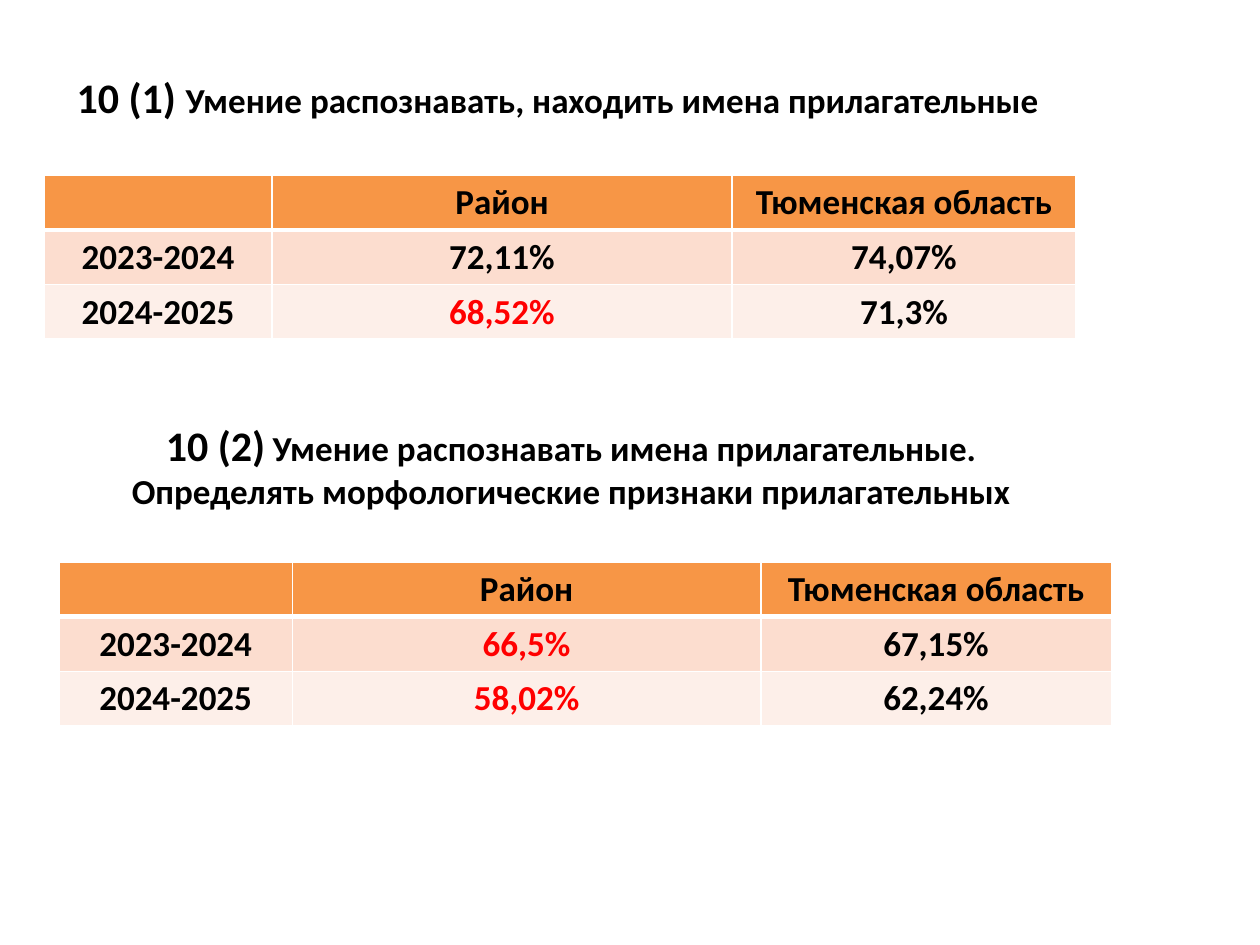
"""Builds a slide comparing district and regional results for two adjective skills."""
from lxml.etree import SubElement
from pptx import Presentation
from pptx.dml.color import RGBColor
from pptx.enum.text import MSO_AUTO_SIZE as AutoSize, PP_ALIGN as Align
from pptx.oxml.ns import qn
from pptx.util import Inches, Pt

BLACK = RGBColor(0x00, 0x00, 0x00)
RED = RGBColor(0xFF, 0x00, 0x00)
WHITE = RGBColor(0xFF, 0xFF, 0xFF)
ORANGE = RGBColor(0xF7, 0x96, 0x46)
PEACH = RGBColor(0xFC, 0xDD, 0xCF)
PALE_PEACH = RGBColor(0xFD, 0xEF, 0xE9)

HEADER = ("", "Район", "Тюменская область")
ROW_FILLS = (ORANGE, PEACH, PALE_PEACH)
ROW_HEIGHT = 0.43


class ResultsSlide:
    """Holds the text style and the current slide."""

    font_name = "Calibri"
    text_size = 20

    def __init__(self, presentation):
        self.slide = presentation.slides.add_slide(presentation.slide_layouts[6])

    def format_run(self, run, size=text_size, color=BLACK):
        run.font.name = self.font_name
        run.font.size = Pt(size)
        run.font.bold = True
        run.font.color.rgb = color

    def add_heading(self, left, top, width, height, lines, align=Align.LEFT):
        shape = self.slide.shapes.add_textbox(
            Inches(left), Inches(top), Inches(width), Inches(height))
        text_frame = shape.text_frame
        text_frame.word_wrap = True
        text_frame.auto_size = AutoSize.SHAPE_TO_FIT_TEXT
        for index, line in enumerate(lines):
            paragraph = text_frame.add_paragraph() if index else text_frame.paragraphs[0]
            paragraph.alignment = align
            for text, size in line:
                run = paragraph.add_run()
                run.text = text
                self.format_run(run, size)

    def add_borders(self, cell, widths):
        properties = cell._tc.get_or_add_tcPr()
        for side, width in widths.items():
            line = SubElement(properties, qn(f"a:ln{side}"), w=str(Pt(width)))
            fill = SubElement(line, qn("a:solidFill"))
            SubElement(fill, qn("a:srgbClr"), val=str(WHITE))

    def add_results_table(self, left, top, column_widths, results, red_cells):
        rows = (HEADER, *results)
        table = self.slide.shapes.add_table(
            len(rows), len(HEADER), Inches(left), Inches(top),
            Inches(sum(column_widths)), Inches(ROW_HEIGHT * len(rows))).table
        for column, width in zip(table.columns, column_widths):
            column.width = Inches(width)
        for row_index, (values, fill) in enumerate(zip(rows, ROW_FILLS)):
            table.rows[row_index].height = Inches(ROW_HEIGHT)
            borders = {"L": 1, "R": 1, "T": 3 if row_index == 1 else 1,
                       "B": 3 if row_index == 0 else 1}
            for column_index, value in enumerate(values):
                cell = table.cell(row_index, column_index)
                self.add_borders(cell, borders)
                cell.fill.solid()
                cell.fill.fore_color.rgb = fill
                cell.text_frame.text = value
                paragraph = cell.text_frame.paragraphs[0]
                paragraph.alignment = Align.CENTER
                color = RED if value in red_cells else BLACK
                for run in paragraph.runs:
                    self.format_run(run, color=color)


def main():
    presentation = Presentation()
    presentation.slide_width = Inches(10)
    presentation.slide_height = Inches(7.5)
    slide = ResultsSlide(presentation)

    slide.add_heading(0.51, 0.52, 8.74, 0.5, [
        [("10 (1) ", 24), ("Умение распознавать, находить имена прилагательные", 20)],
    ])
    slide.add_results_table(0.35, 1.39, (1.81, 3.65, 2.73), [
        ("2023-2024", "72,11%", "74,07%"),
        ("2024-2025", "68,52%", "71,3%"),
    ], red_cells={"68,52%"})

    slide.add_heading(0.47, 3.28, 8.19, 0.84, [
        [("10 (2)", 24), (" ", 18), ("Умение распознавать имена прилагательные. ", 20)],
        [("Определять морфологические признаки прилагательных ", 20)],
    ], Align.CENTER)
    slide.add_results_table(0.47, 4.46, (1.85, 3.72, 2.78), [
        ("2023-2024", "66,5%", "67,15%"),
        ("2024-2025", "58,02%", "62,24%"),
    ], red_cells={"66,5%", "58,02%"})

    presentation.save("out.pptx")


if __name__ == "__main__":
    main()
